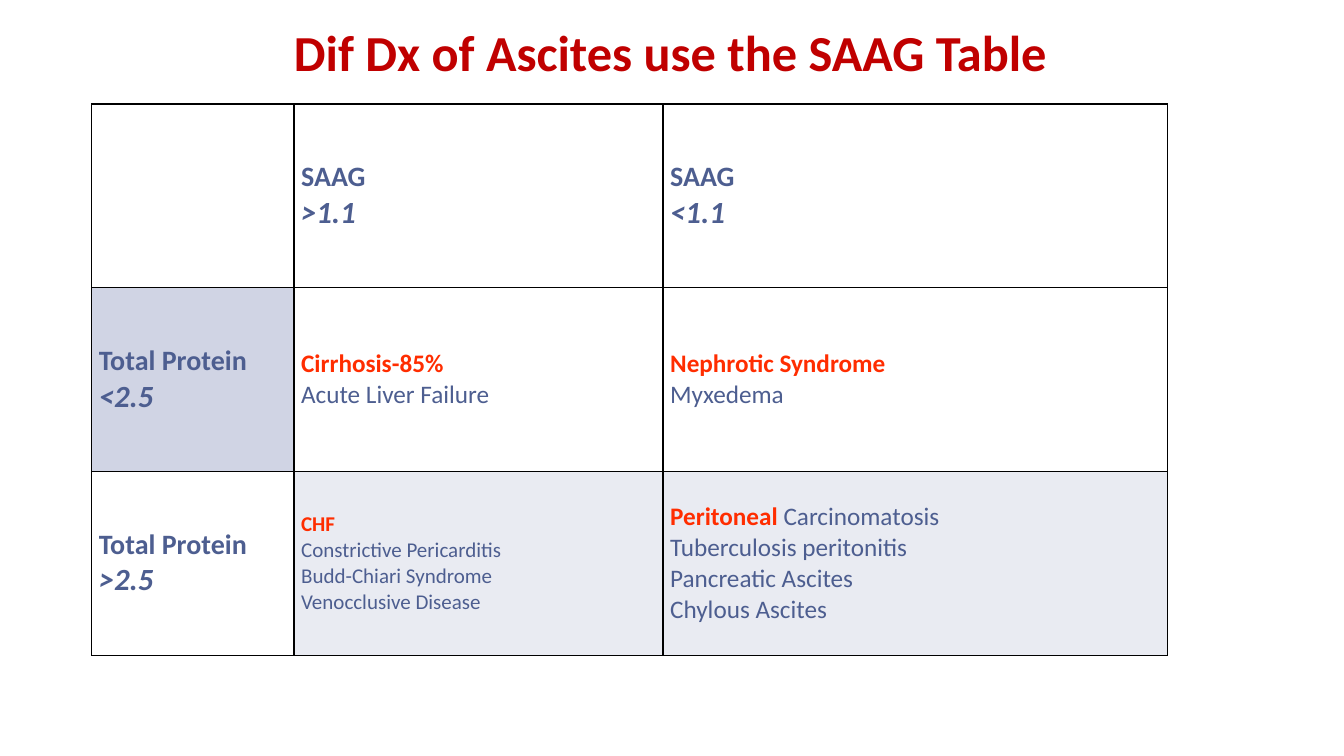
from dataclasses import dataclass

from lxml.etree import SubElement
from pptx import Presentation
from pptx.dml.color import RGBColor as RGB
from pptx.enum.text import MSO_ANCHOR as ANCHOR, PP_ALIGN as ALIGN
from pptx.oxml.ns import qn
from pptx.util import Cm, Pt


@dataclass(frozen=True)
class Theme:
    """Colours and type sizes of the slide."""
    font: str = "Calibri"
    title: str = "C00000"
    text: str = "4D5E90"
    key: str = "FF2D00"
    border: str = "000000"
    label_fill: str = "D0D4E4"
    band_fill: str = "E9EBF2"
    title_size: int = 36
    label_size: int = 20
    value_size: int = 22
    body_size: int = 18
    small_size: int = 15


class SlideBuilder:
    """Adds styled elements to one slide."""

    def __init__(self, slide, theme):
        """Keep the slide and its theme."""
        self.s = slide
        self.theme = theme

    def style(self, r, size, color, bold=False, italic=False):
        """Format one run."""
        r.font.name = self.theme.font
        r.font.size = Pt(size)
        r.font.color.rgb = RGB.from_string(color)
        r.font.bold = bold
        r.font.italic = italic

    def title(self, text, left, top, width, height):
        """Add the centred slide title."""
        tf = self.s.shapes.add_textbox(Cm(left), Cm(top), Cm(width), Cm(height)).text_frame
        tf.word_wrap = True
        tf.vertical_anchor = ANCHOR.MIDDLE
        tf.text = text
        p = tf.paragraphs[0]
        p.alignment = ALIGN.CENTER
        p.line_spacing = 0.9
        self.style(p.runs[0], self.theme.title_size, self.theme.title, bold=True)

    def table(self, left, top, widths, row_height, rows):
        """Add a bordered table and return it."""
        frame = self.s.shapes.add_table(rows, len(widths), Cm(left), Cm(top),
                                        Cm(sum(widths)), Cm(row_height * rows))
        table = frame.table
        table.first_row = table.horz_banding = False
        for column, width in zip(table.columns, widths):
            column.width = Cm(width)
        for row in table.rows:
            row.height = Cm(row_height)
        for cell in table.iter_cells():
            cell.vertical_anchor = ANCHOR.MIDDLE
            cell.margin_left = cell.margin_right = Cm(0.18)
            cell.margin_top = cell.margin_bottom = Cm(0.18)
            self.borders(cell)
            cell.fill.background()
        return table

    def borders(self, cell):
        """Draw a thin line on all four sides of a cell."""
        tc_pr = cell._tc.get_or_add_tcPr()
        for side in ("a:lnL", "a:lnR", "a:lnT", "a:lnB"):
            line = SubElement(tc_pr, qn(side), w=str(Pt(1)))
            fill = SubElement(line, qn("a:solidFill"))
            SubElement(fill, qn("a:srgbClr"), val=self.theme.border)

    def fill(self, cell, color):
        """Shade one cell."""
        cell.fill.solid()
        cell.fill.fore_color.rgb = RGB.from_string(color)

    def label(self, cell, name, limit):
        """Write a measure and its limit in a heading cell."""
        t = self.theme
        tf = cell.text_frame
        tf.text = f"{name}\n{limit}"
        self.style(tf.paragraphs[0].runs[0], t.label_size, t.text, bold=True)
        self.style(tf.paragraphs[1].runs[0], t.value_size, t.text, bold=True, italic=True)

    def diagnoses(self, cell, size, key, rest, others):
        """Write a list of diagnoses that opens with a highlighted one."""
        t = self.theme
        tf = cell.text_frame
        tf.text = "\n".join([key, *others])
        first, *following = tf.paragraphs
        self.style(first.runs[0], size, t.key, bold=True)
        if rest:
            r = first.add_run()
            r.text = rest
            self.style(r, size, t.text)
        for p in following:
            self.style(p.runs[0], size, t.text)


def main():
    """Build and save the slide."""
    prs = Presentation()
    prs.slide_width, prs.slide_height = Cm(33.87), Cm(19.05)
    theme = Theme()
    b = SlideBuilder(prs.slides.add_slide(prs.slide_layouts[6]), theme)

    b.title("Dif Dx of Ascites use the SAAG Table", 3.9, 0.3, 26, 2.2)
    table = b.table(2.31, 2.62, [5.1, 9.3, 12.72], 4.63, 3)

    for i, sign in enumerate("><", 1):
        b.label(table.cell(0, i), "SAAG", f"{sign}1.1")
    for i, sign in enumerate("<>", 1):
        b.label(table.cell(i, 0), "Total Protein", f"{sign}2.5")

    body, small = theme.body_size, theme.small_size
    groups = [
        (1, 1, body, "Cirrhosis-85%", "", ["Acute Liver Failure"]),
        (1, 2, body, "Nephrotic Syndrome", "", ["Myxedema"]),
        (2, 1, small, "CHF", "",
         ["Constrictive Pericarditis", "Budd-Chiari Syndrome", "Venocclusive Disease"]),
        (2, 2, body, "Peritoneal ", "Carcinomatosis",
         ["Tuberculosis peritonitis", "Pancreatic Ascites", "Chylous Ascites"]),
    ]
    for row, column, size, key, rest, others in groups:
        b.diagnoses(table.cell(row, column), size, key, rest, others)

    b.fill(table.cell(1, 0), theme.label_fill)
    for column in (1, 2):
        b.fill(table.cell(2, column), theme.band_fill)

    prs.save("out.pptx")


if __name__ == "__main__":
    main()
